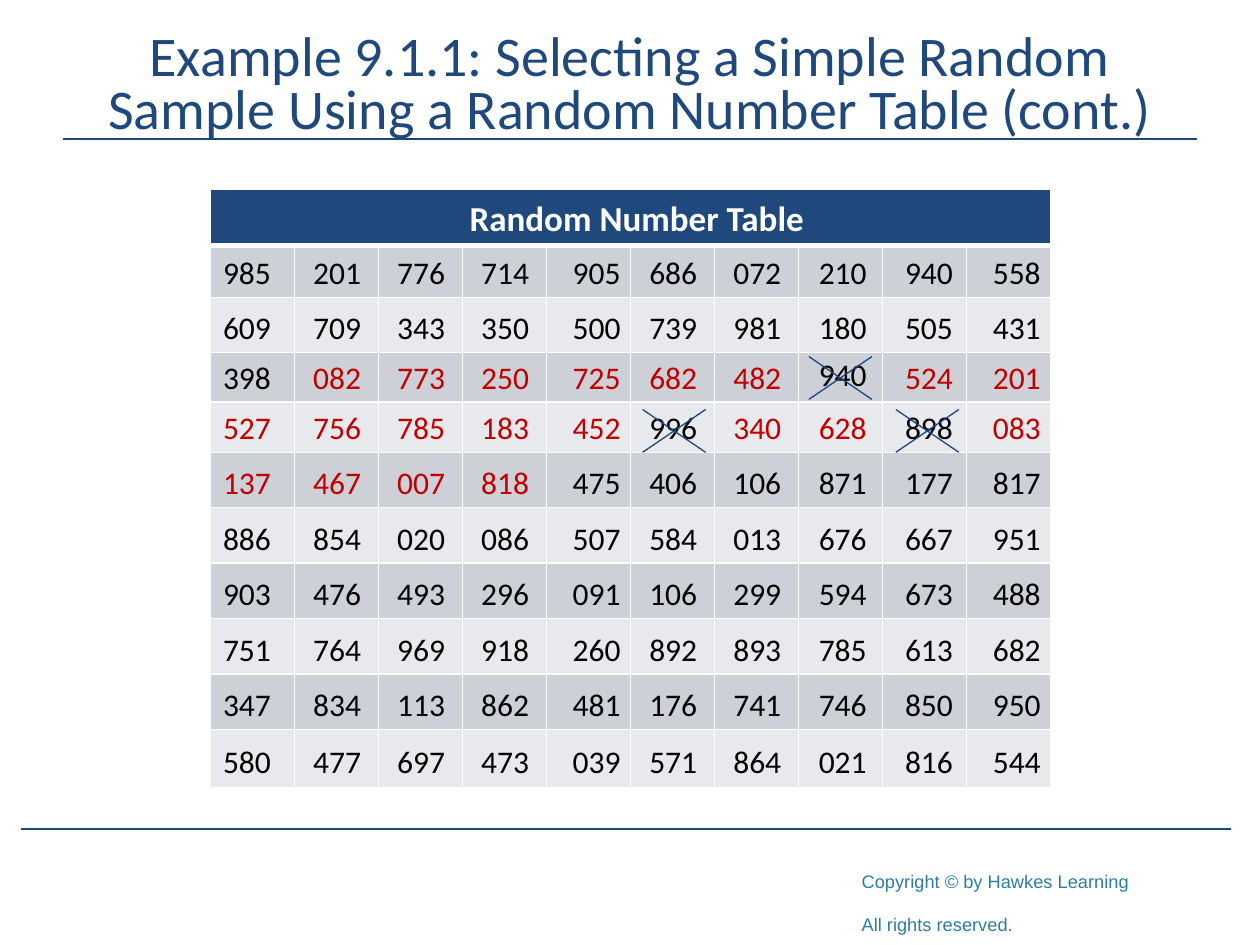
from dataclasses import dataclass

from lxml.etree import SubElement
from pptx import Presentation
from pptx.dml.color import RGBColor
from pptx.enum.shapes import MSO_CONNECTOR, MSO_SHAPE
from pptx.enum.text import MSO_ANCHOR, MSO_AUTO_SIZE, PP_ALIGN
from pptx.oxml.ns import qn
from pptx.util import Inches, Pt


@dataclass(frozen=True)
class Theme:
    """Colours, fonts, type sizes and line widths of the slide."""
    title: str = "1F497D"
    rule: str = "1C477D"
    footer: str = "2D7D9F"
    picked: str = "C00000"
    ink: str = "000000"
    paper: str = "FFFFFF"
    bands: tuple = ("CDD0D7", "E8E9EC")
    font: str = "Calibri"
    footer_font: str = "Arial"
    title_size: int = 32
    heading_size: int = 20
    body_size: int = 18
    rule_width: float = 1.25
    cross_width: float = 0.75


@dataclass(frozen=True)
class Box:
    """A region measured in columns and rows of the slide grid."""
    left: float
    top: float
    width: float
    height: float


THEME = Theme()
GRID_COLUMNS, GRID_ROWS = 100, 75
UNIT = Inches(10) / GRID_COLUMNS

ROW_HEIGHTS = [4.5, 4.1, 4.4, 3.9, 4, 4.4, 4.4, 4.4, 4.4, 4.4, 4.6]
TOP_INSETS = [0.7, 0.7, 1, 0.5, 0.6, 1, 1, 1, 1, 1, 1.1]
FIRST, MIDDLE = (PP_ALIGN.LEFT, 1, 0), (PP_ALIGN.CENTER, 0.1, 0)
INDENTED, LAST = (PP_ALIGN.LEFT, 1.6, 0), (PP_ALIGN.RIGHT, 0, 0.8)
COLUMN_FORMATS = [FIRST, MIDDLE, MIDDLE, MIDDLE, LAST, MIDDLE, MIDDLE,
                  INDENTED, (PP_ALIGN.RIGHT, 0, 1.1), LAST]
NUMBERS = """
985 201 776 714 905 686 072 210 940 558
609 709 343 350 500 739 981 180 505 431
398 082 773 250 725 682 482 940 524 201
527 756 785 183 452 996 340 628 898 083
137 467 007 818 475 406 106 871 177 817
886 854 020 086 507 584 013 676 667 951
903 476 493 296 091 106 299 594 673 488
751 764 969 918 260 892 893 785 613 682
347 834 113 862 481 176 741 746 850 950
580 477 697 473 039 571 864 021 816 544
""".split()
PICKED = range(21, 44)
CROSSES = {27: Box(64.2, 28.3, 5, 3.4),
           35: Box(51, 32.5, 5, 3.4),
           38: Box(71.1, 32.5, 5, 3.4)}


def grid(value):
    """Turn grid units into a length."""
    return round(value * UNIT)


def place(box):
    """Return the left, top, width and height of a box."""
    return [grid(side) for side in (box.left, box.top, box.width, box.height)]


def write(paragraph, text, *, size, color, font=THEME.font, bold=False,
          align=PP_ALIGN.LEFT, indent=0, right=0, spacing=None, baseline=None):
    """Put formatted text into a paragraph."""
    paragraph.alignment = align
    if spacing:
        paragraph.line_spacing = Pt(spacing)
    properties = paragraph._p.get_or_add_pPr()
    properties.set("marL", str(grid(indent)))
    properties.set("marR", str(grid(right)))
    properties.set("indent", "0")
    run = paragraph.add_run()
    run.text = text
    run.font.name = font
    run.font.size = Pt(size)
    run.font.bold = bold
    run.font.color.rgb = RGBColor.from_string(color)
    if baseline:
        run._r.get_or_add_rPr().set("baseline", str(baseline))


def draw_line(slide, start, end, width):
    """Draw a straight line between two grid points."""
    line = slide.shapes.add_connector(
        MSO_CONNECTOR.STRAIGHT, *[grid(value) for value in (*start, *end)])
    line.line.color.rgb = RGBColor.from_string(THEME.rule)
    line.line.width = Pt(width)
    SubElement(line._element.spPr, qn("a:effectLst"))


def draw_cross(slide, box):
    """Strike out a box with its two diagonals."""
    right, bottom = box.left + box.width, box.top + box.height
    draw_line(slide, (box.left, box.top), (right, bottom), THEME.cross_width)
    draw_line(slide, (right, box.top), (box.left, bottom), THEME.cross_width)


def add_title(slide, box):
    """Place the title and the rule under it."""
    frame = slide.shapes.add_textbox(*place(box)).text_frame
    frame.word_wrap = True
    frame.vertical_anchor = MSO_ANCHOR.MIDDLE
    write(frame.paragraphs[0],
          "Example 9.1.1: Selecting a Simple Random Sample "
          "Using a Random Number Table (cont.)",
          size=THEME.title_size, color=THEME.title, align=PP_ALIGN.CENTER, spacing=30)
    rule = box.top + box.height - 1
    draw_line(slide, (box.left, rule), (box.left + box.width, rule), THEME.rule_width)


def add_footer(slide, box):
    """Place the copyright lines and the rule across the slide."""
    shape = slide.shapes.add_shape(MSO_SHAPE.RECTANGLE, *place(box))
    shape.shadow.inherit = False
    shape.fill.solid()
    shape.fill.fore_color.rgb = RGBColor.from_string(THEME.paper)
    shape.line.fill.background()
    frame = shape.text_frame
    frame.word_wrap = True
    frame.auto_size = MSO_AUTO_SIZE.SHAPE_TO_FIT_TEXT
    frame.vertical_anchor = MSO_ANCHOR.TOP
    frame.margin_top = grid(3.4)
    lines = ["Copyright © by Hawkes Learning", "All rights reserved."]
    for index, text in enumerate(lines):
        paragraph = frame.add_paragraph() if index else frame.paragraphs[0]
        write(paragraph, text, size=THEME.body_size, color=THEME.footer,
              font=THEME.footer_font, baseline=-25000)
    rule = box.top + 1.8
    draw_line(slide, (1.7, rule), (97.7, rule), THEME.rule_width)


def style_cell(cell, fill, top, bottom_width=1):
    """Set the borders, fill and insets of a cell."""
    properties = cell._tc.get_or_add_tcPr()
    for side, width in zip("LRTB", (1, 1, 1, bottom_width)):
        border = SubElement(properties, qn(f"a:ln{side}"), w=str(Pt(width)))
        SubElement(SubElement(border, qn("a:solidFill")), qn("a:srgbClr"), val=THEME.paper)
    cell.fill.solid()
    cell.fill.fore_color.rgb = RGBColor.from_string(fill)
    cell.margin_left = cell.margin_right = cell.margin_bottom = 0
    cell.margin_top = grid(top)


def add_number_table(slide, box):
    """Place the random number table with its picked and struck numbers."""
    count = len(COLUMN_FORMATS)
    table = slide.shapes.add_table(len(ROW_HEIGHTS), count, *place(box)).table
    table.first_row = table.horz_banding = False
    for column in table.columns:
        column.width = grid(box.width / count)
    for row, height in zip(table.rows, ROW_HEIGHTS):
        row.height = grid(height)
    for cell in table.rows[0].cells:
        style_cell(cell, THEME.title, TOP_INSETS[0], bottom_width=3)
    heading = table.cell(0, 0)
    heading.merge(table.cell(0, count - 1))
    write(heading.text_frame.paragraphs[0], "Random Number Table", bold=True,
          size=THEME.heading_size, color=THEME.paper, align=PP_ALIGN.CENTER, indent=1)
    for index, number in enumerate(NUMBERS):
        row, column = divmod(index, count)
        cell = table.cell(row + 1, column)
        raised = 0.2 if index == 27 else 0
        style_cell(cell, THEME.bands[row % 2], TOP_INSETS[row + 1] - raised)
        picked = index in PICKED and index not in CROSSES
        align, indent, right = COLUMN_FORMATS[column]
        write(cell.text_frame.paragraphs[0], number, size=THEME.body_size,
              color=THEME.picked if picked else THEME.ink,
              align=align, indent=indent, right=right)
    for cross in CROSSES.values():
        draw_cross(slide, cross)


def main():
    """Build and save the slide."""
    presentation = Presentation()
    presentation.slide_width = grid(GRID_COLUMNS)
    presentation.slide_height = grid(GRID_ROWS)
    slide = presentation.slides.add_slide(presentation.slide_layouts[6])
    add_footer(slide, Box(67.4, 64, 30.8, 7.1))
    add_title(slide, Box(5, 2, 90, 10))
    add_number_table(slide, Box(16.7, 15, 66.7, sum(ROW_HEIGHTS)))
    presentation.save("out.pptx")


if __name__ == "__main__":
    main()
